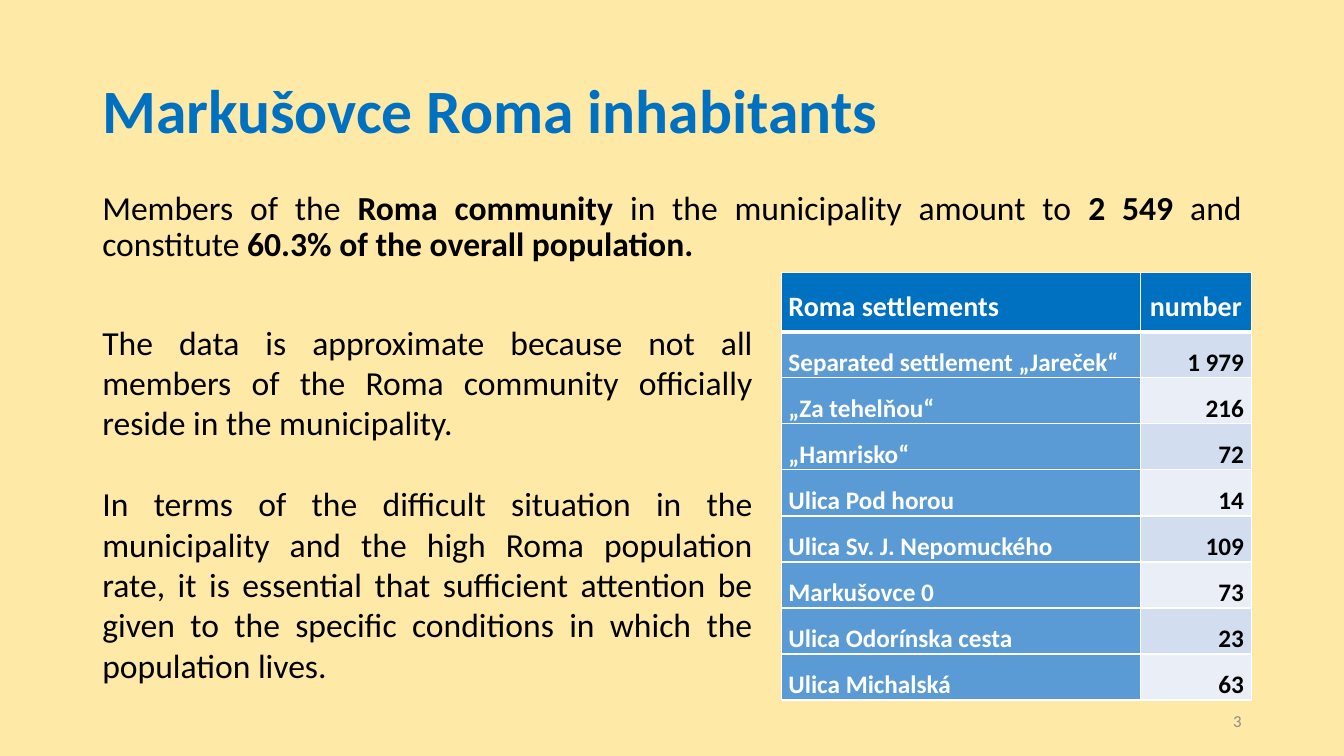
from lxml import etree
from pptx import Presentation
from pptx import util as u
from pptx.dml.color import RGBColor
from pptx.enum import text
from pptx.oxml import ns

TITLE = "Markušovce Roma inhabitants"
SUMMARY = [
    ("Members of the ", False),
    ("Roma community ", True),
    ("in the municipality amount to ", False),
    ("2 549 ", True),
    ("and constitute ", False),
    ("60.3% of the overall population.", True),
]
REMARKS = [
    "The data is approximate because not all members of the Roma community "
    "officially reside in the municipality.",
    "In terms of the difficult situation in the municipality and the high Roma "
    "population rate, it is essential that sufficient attention be given to the "
    "specific conditions in which the population lives.",
]
SETTLEMENTS = [
    ("Roma settlements", "number"),
    ("Separated settlement „Jareček“", "1 979"),
    ("„Za tehelňou“", "216"),
    ("„Hamrisko“", "72"),
    ("Ulica Pod horou", "14"),
    ("Ulica Sv. J. Nepomuckého", "109"),
    ("Markušovce 0", "73"),
    ("Ulica Odorínska cesta", "23"),
    ("Ulica Michalská", "63"),
]
PAGE_NUMBER = "3"

THEME = {
    "font": "Calibri",
    "background": "FFE9A7", "accent": "0070C0", "name_fill": "5B9BD5",
    "bands": ("D2DEEF", "EAEFF7"),
    "white": "FFFFFF", "black": "000000", "grey": "8C8C8C",
    "title": 44, "body": 24, "header": 20, "cell": 18, "page": 12,
}
LEFT, CONTENT_WIDTH = 2.33, 29.21
COLUMN_WIDTHS = (9.05, 2.79)
HEADER_HEIGHT, ROW_HEIGHT = 1.5, 1.16
ALIGN = text.PP_ALIGN


def color(name):
    return RGBColor.from_string(THEME.get(name, name))


def style(paragraph, size, ink, bold=None, align=ALIGN.LEFT, spacing=1.0):
    paragraph.alignment = align
    paragraph.line_spacing = spacing
    font = paragraph.font
    font.name, font.size, font.bold = THEME["font"], u.Pt(THEME[size]), bold
    font.color.rgb = color(ink)


def add_box(slide, left, top, width, height, anchor=text.MSO_ANCHOR.TOP):
    box = slide.shapes.add_textbox(u.Cm(left), u.Cm(top), u.Cm(width), u.Cm(height))
    box.text_frame.word_wrap = True
    box.text_frame.vertical_anchor = anchor
    return box.text_frame


def add_borders(cell, bottom_width):
    properties = cell._tc.get_or_add_tcPr()
    for side, width in (("L", 1), ("R", 1), ("T", 1), ("B", bottom_width)):
        line = etree.SubElement(properties, ns.qn(f"a:ln{side}"), w=str(u.Pt(width)))
        fill = etree.SubElement(line, ns.qn("a:solidFill"))
        etree.SubElement(fill, ns.qn("a:srgbClr"), val=THEME["white"])


def add_settlements(slide):
    table_height = HEADER_HEIGHT + ROW_HEIGHT * (len(SETTLEMENTS) - 1)
    table = slide.shapes.add_table(
        len(SETTLEMENTS), len(COLUMN_WIDTHS), u.Cm(19.69), u.Cm(6.86),
        u.Cm(sum(COLUMN_WIDTHS)), u.Cm(table_height)).table
    for column, width in zip(table.columns, COLUMN_WIDTHS):
        column.width = u.Cm(width)
    for row_index, values in enumerate(SETTLEMENTS):
        header = row_index == 0
        table.rows[row_index].height = u.Cm(HEADER_HEIGHT if header else ROW_HEIGHT)
        band = THEME["bands"][(row_index - 1) % 2]
        fills = ("accent", "accent") if header else ("name_fill", band)
        inks = ("white", "white" if header else "black")
        aligns = (ALIGN.LEFT, ALIGN.CENTER if header else ALIGN.RIGHT)
        for column_index, value in enumerate(values):
            cell = table.cell(row_index, column_index)
            cell.margin_left = cell.margin_right = u.Cm(0.18)
            cell.margin_top = cell.margin_bottom = 0
            add_borders(cell, 3 if header else 1)
            cell.fill.solid()
            cell.fill.fore_color.rgb = color(fills[column_index])
            cell.text = value
            style(cell.text_frame.paragraphs[0], "header" if header else "cell",
                  inks[column_index], True, aligns[column_index], 1.5)


def main():
    presentation = Presentation()
    presentation.slide_width, presentation.slide_height = u.Cm(33.87), u.Cm(19.05)
    slide = presentation.slides.add_slide(presentation.slide_layouts[6])
    slide.background.fill.solid()
    slide.background.fill.fore_color.rgb = color("background")

    title = add_box(slide, LEFT, 1.01, CONTENT_WIDTH, 3.68, text.MSO_ANCHOR.MIDDLE)
    title.text = TITLE
    style(title.paragraphs[0], "title", "accent", True, spacing=0.9)

    summary = add_box(slide, LEFT, 4.7, CONTENT_WIDTH, 2.16).paragraphs[0]
    for words, bold in SUMMARY:
        run = summary.add_run()
        run.text, run.font.bold = words, bold
    style(summary, "body", "black", align=ALIGN.JUSTIFY, spacing=0.9)

    add_settlements(slide)

    remarks = add_box(slide, LEFT, 7.98, 16.89, 9.5)
    remarks.text = "\n".join(REMARKS)
    for index, paragraph in enumerate(remarks.paragraphs):
        style(paragraph, "body", "black", align=ALIGN.JUSTIFY)
        if index:
            paragraph.space_before = u.Pt(29)

    page = add_box(slide, 23.92, 17.66, 7.62, 1.01, text.MSO_ANCHOR.MIDDLE)
    page.text = PAGE_NUMBER
    style(page.paragraphs[0], "page", "grey", align=ALIGN.RIGHT)

    presentation.save("out.pptx")


if __name__ == "__main__":
    main()
